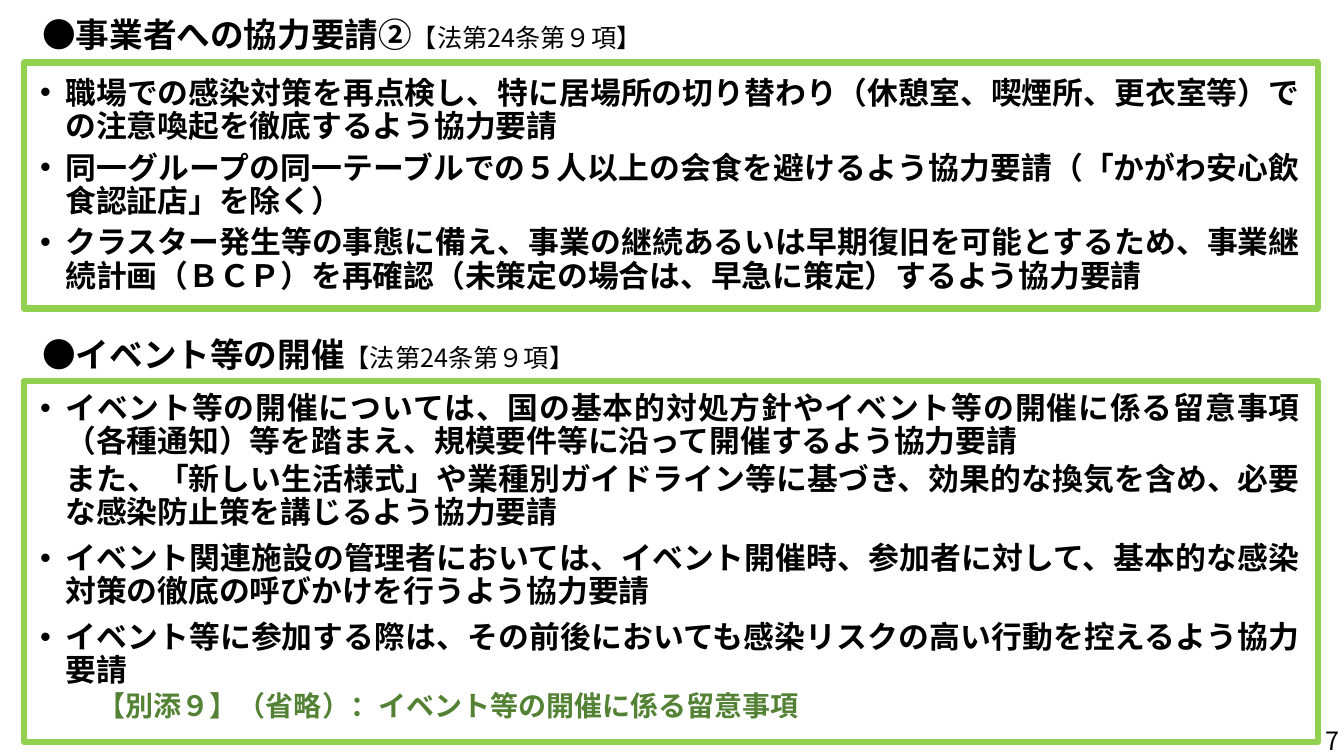
"""Build the slide on cooperation requests to businesses and event organisers."""
from pptx import Presentation
from pptx.dml.color import RGBColor
from pptx.enum.shapes import MSO_SHAPE as Shape
from pptx.enum.text import MSO_ANCHOR as Anchor, PP_ALIGN as Align
from pptx.oxml.ns import qn
from pptx.util import Inches, Pt
from lxml.etree import SubElement

JAPANESE = "Noto Sans CJK JP"


def color(hex_string):
    return RGBColor.from_string(hex_string)


def write(para, text, size=22, font="Arial", fill="000000", bold=True,
          align=None, line=0.9, before=0, left=0, bullet=False):
    para.alignment = align
    para.line_spacing = line
    para.space_before = Pt(before)
    props = para._p.get_or_add_pPr()
    if left:
        props.set("marL", str(Inches(left)))
        props.set("indent", str(Inches(-0.25 if bullet else 0)))
    if bullet:
        SubElement(props, qn("a:buFont")).set("typeface", "Arial")
        SubElement(props, qn("a:buChar")).set("char", "•")
    span = para.add_run()
    span.text = text
    span.font.size = Pt(size)
    span.font.bold = bold
    span.font.color.rgb = color(fill)
    span.font.name = font
    SubElement(span._r.get_or_add_rPr(), qn("a:ea")).set("typeface", JAPANESE)


deck = Presentation()
deck.slide_width, deck.slide_height = Inches(13.33), Inches(7.5)
page = deck.slides.add_slide(deck.slide_layouts[6])

item = {"left": 0.28, "bullet": True}
sections = [
    ("●事業者への協力要請②", 0.11, (0.62, 2.44), (0.72, 2.46), [
        ("職場での感染対策を再点検し、特に居場所の切り替わり（休憩室、喫煙所、更衣室等）での注意喚起を徹底するよう協力要請", item),
        ("同一グループの同一テーブルでの５人以上の会食を避けるよう協力要請（「かがわ安心飲食認証店」を除く）",
         {**item, "before": 6}),
        ("クラスター発生等の事態に備え、事業の継続あるいは早期復旧を可能とするため、事業継続計画（ＢＣＰ）を再確認（未策定の場合は、早急に策定）するよう協力要請",
         {**item, "before": 6}),
    ]),
    ("●イベント等の開催", 3.28, (3.78, 3.58), (3.85, 3.56), [
        ("イベント等の開催については、国の基本的対処方針やイベント等の開催に係る留意事項（各種通知）等を踏まえ、規模要件等に沿って開催するよう協力要請", item),
        ("また、「新しい生活様式」や業種別ガイドライン等に基づき、効果的な換気を含め、必要な感染防止策を講じるよう協力要請",
         {"left": 0.28, "before": 3}),
        ("イベント関連施設の管理者においては、イベント開催時、参加者に対して、基本的な感染対策の徹底の呼びかけを行うよう協力要請",
         {**item, "before": 9}),
        ("イベント等に参加する際は、その前後においても感染リスクの高い行動を控えるよう協力要請",
         {**item, "before": 9}),
        ("【別添９】（省略）：イベント等の開催に係る留意事項",
         {"left": 0.6, "before": 3, "size": 20, "fill": "548235"}),
    ]),
]

for heading, heading_top, (frame_top, frame_height), (body_top, body_height), items in sections:
    frame = page.shapes.add_shape(Shape.RECTANGLE, Inches(0.24), Inches(frame_top),
                                  Inches(12.83), Inches(frame_height))
    frame.shadow.inherit = False
    frame.fill.background()
    frame.line.color.rgb = color("92D050")
    frame.line.width = Pt(4.5)

    title = page.shapes.add_textbox(Inches(0.32), Inches(heading_top), Inches(7.05), Inches(0.51))
    title.text_frame.word_wrap = True
    title.text_frame.vertical_anchor = Anchor.MIDDLE
    title_para = title.text_frame.paragraphs[0]
    write(title_para, heading, size=24)
    write(title_para, "【法第24条第９項】", size=18, font=JAPANESE, bold=False)

    body = page.shapes.add_textbox(Inches(0.27), Inches(body_top), Inches(12.73), Inches(body_height))
    body.text_frame.word_wrap = True
    for index, (text, style) in enumerate(items):
        para = body.text_frame.add_paragraph() if index else body.text_frame.paragraphs[0]
        write(para, text, align=Align.JUSTIFY, **style)

number = page.shapes.add_textbox(Inches(10.38), Inches(7.15), Inches(3), Inches(0.4))
number.text_frame.word_wrap = True
number.text_frame.vertical_anchor = Anchor.MIDDLE
write(number.text_frame.paragraphs[0], "7", size=18, font=JAPANESE, bold=False,
      align=Align.RIGHT, line=1.0)

deck.save("out.pptx")
